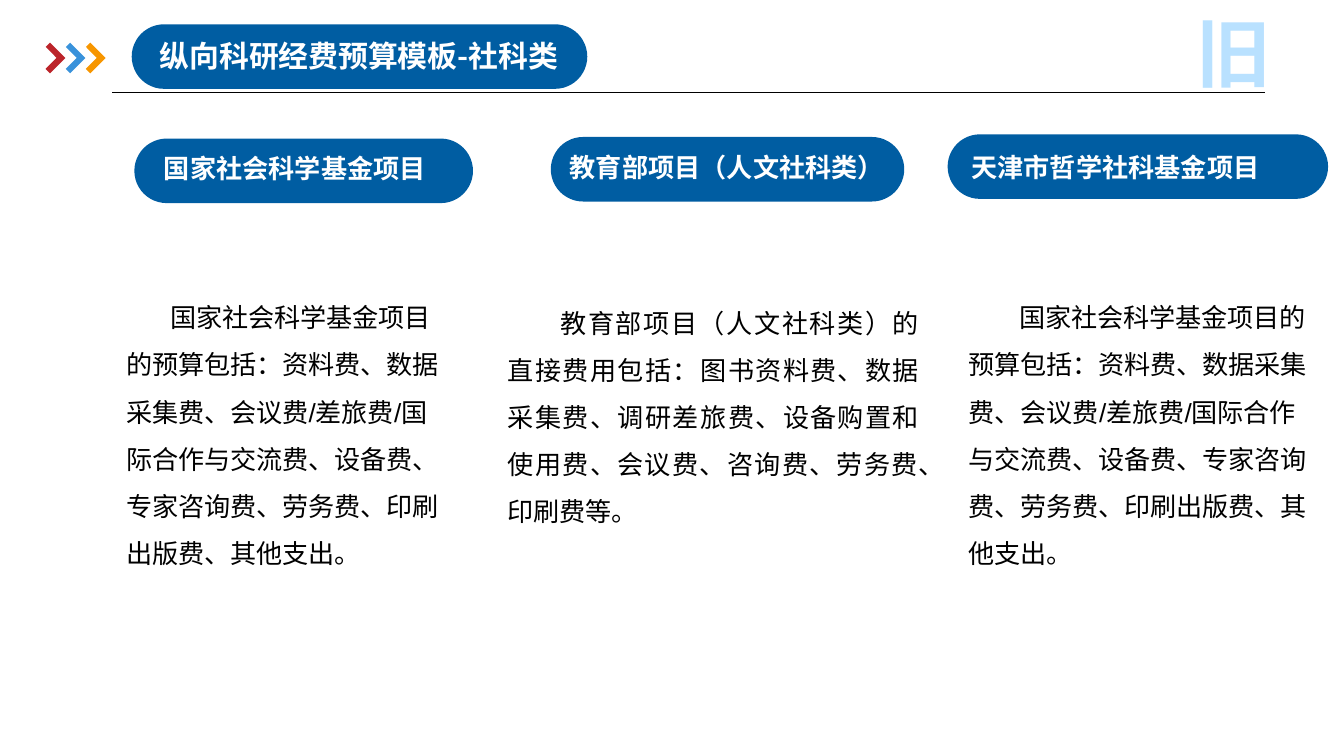
"""Build the slide on social-science research budget templates."""
from pptx import Presentation
from pptx.dml.color import RGBColor
from pptx.enum.shapes import MSO_CONNECTOR, MSO_SHAPE
from pptx.enum.text import MSO_ANCHOR, MSO_AUTO_SIZE, PP_ALIGN
from pptx.oxml.ns import qn
from pptx.util import Cm, Pt

BLUE = RGBColor(0x00, 0x5D, 0xA2)
SKY = RGBColor(0x39, 0x92, 0xDB)
PALE = RGBColor(0xB9, 0xE1, 0xFF)
ORANGE = RGBColor(0xF7, 0x96, 0x00)
RED = RGBColor(0xBC, 0x24, 0x2A)
WHITE = RGBColor(0xFF, 0xFF, 0xFF)
BLACK = RGBColor(0x00, 0x00, 0x00)
HEADING_FONT = "Noto Sans CJK SC"
BODY_FONT = "Arial"


def add_filled(preset, left, top, width, height, color):
    shape = slide.shapes.add_shape(preset, Cm(left), Cm(top), Cm(width), Cm(height))
    shape.shadow.inherit = False
    shape.fill.solid()
    shape.fill.fore_color.rgb = color
    shape.line.fill.background()
    return shape


def write(box, text, size, color, bold=False, font=BODY_FONT, anchor=MSO_ANCHOR.TOP):
    frame = box.text_frame
    frame.word_wrap = True
    frame.auto_size = MSO_AUTO_SIZE.NONE
    frame.vertical_anchor = anchor
    frame.margin_left = frame.margin_right = frame.margin_top = frame.margin_bottom = 0
    paragraph = frame.paragraphs[0]
    run = paragraph.add_run()
    run.text = text
    run.font.size = Pt(size)
    run.font.bold = bold
    run.font.name = font
    run.font.color.rgb = color
    east_asian = run.font._element.makeelement(qn("a:ea"), {"typeface": HEADING_FONT})
    run.font._element.find(qn("a:latin")).addnext(east_asian)
    return paragraph


prs = Presentation()
prs.slide_width = Cm(25.4)
prs.slide_height = Cm(14.29)
slide = prs.slides.add_slide(prs.slide_layouts[5])

rule = slide.shapes.add_connector(
    MSO_CONNECTOR.STRAIGHT, Cm(2.12), Cm(1.75), Cm(23.9), Cm(1.75))
rule.line.color.rgb = BLACK
rule.line.width = Pt(0.75)
rule_properties = rule._element.spPr
rule_properties.append(rule_properties.makeelement(qn("a:effectLst"), {}))

for index, color in enumerate((RED, SKY, ORANGE)):
    chevron = add_filled(MSO_SHAPE.CORNER, 0.74 + 0.38 * index, 0.89, 0.41, 0.41, color)
    chevron.adjustments[0] = 0.28
    chevron.adjustments[1] = 0.29
    chevron.rotation = 225

pills = [
    (2.49, 0.46, 8.61),
    (2.54, 2.62, 6.4),
    (10.41, 2.59, 6.68),
    (17.91, 2.54, 7.19),
]
for left, top, width in pills:
    pill = add_filled(MSO_SHAPE.ROUNDED_RECTANGLE, left, top, width, 1.22, BLUE)
    pill.adjustments[0] = 0.5

headings = [
    ("国家社会科学基金项目", 3.1, 2.74),
    ("教育部项目（人文社科类）", 10.77, 2.72),
    ("天津市哲学社科基金项目", 18.36, 2.72),
]
for heading, left, top in headings:
    label = slide.shapes.add_textbox(Cm(left), Cm(top), Cm(6.3), Cm(0.86))
    write(label, heading, 14, WHITE, True, HEADING_FONT, MSO_ANCHOR.MIDDLE)

SHARED_COSTS = ("预算包括：资料费、数据采集费、会议费/差旅费/国际合作与交流费、"
                "设备费、专家咨询费、劳务费、印刷出版费、其他支出。")
MINISTRY_COSTS = ("教育部项目（人文社科类）的直接费用包括：图书资料费、数据采集费、调研差旅费、"
                  "设备购置和使用费、会议费、咨询费、劳务费、印刷费等。")
budgets = [
    ("国家社会科学基金项目的" + SHARED_COSTS, 2.39, 5.41, 6.15, 0.84, PP_ALIGN.LEFT),
    (MINISTRY_COSTS, 9.6, 5.51, 7.77, 0.99, PP_ALIGN.JUSTIFY),
    ("国家社会科学基金项目的" + SHARED_COSTS, 18.31, 5.41, 6.43, 0.95, PP_ALIGN.LEFT),
]
for costs, left, top, width, indent, alignment in budgets:
    budget = slide.shapes.add_textbox(Cm(left), Cm(top), Cm(width), Cm(6.5))
    paragraph = write(budget, costs, 14, BLACK)
    paragraph.alignment = alignment
    paragraph.line_spacing = 1.5
    paragraph._element.get_or_add_pPr().set("indent", str(Cm(indent)))
    paragraph.runs[0].font._element.set("spc", "-10")

old_mark = slide.shapes.add_textbox(Cm(21.13), Cm(0.13), Cm(4.37), Cm(1.7))
write(old_mark, "旧", 40, PALE, True).alignment = PP_ALIGN.CENTER

title = slide.shapes.title
title.left, title.top, title.width, title.height = Cm(2.77), Cm(0.79), Cm(8.03), Cm(0.61)
title_line = write(title, "纵向科研经费预算模板-社科类", 16, WHITE, True,
                   HEADING_FONT, MSO_ANCHOR.MIDDLE)
title_line.alignment = PP_ALIGN.CENTER
title_line.line_spacing = 0.9
slide.shapes._spTree.append(title._element)

prs.save("out.pptx")
